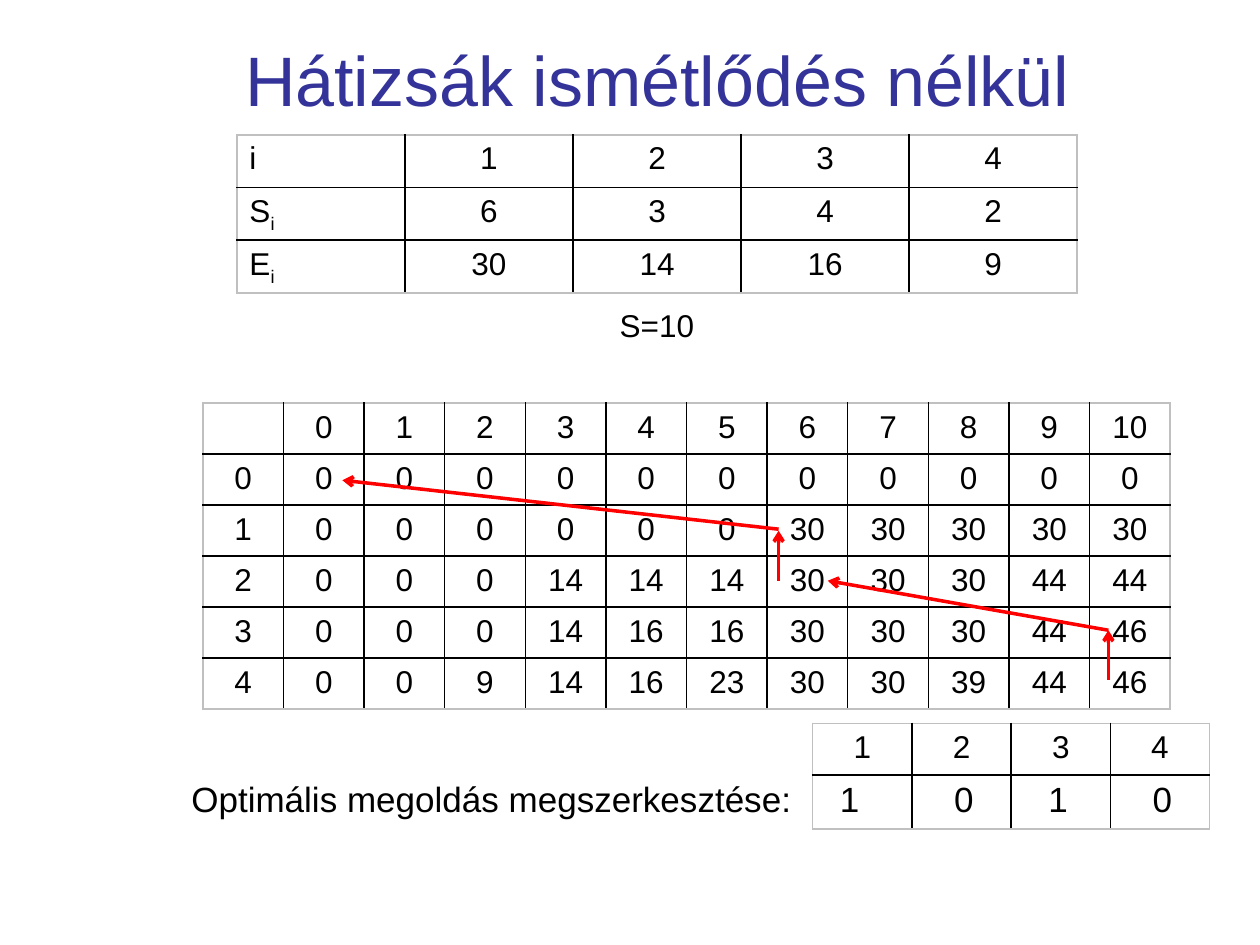
from lxml.etree import SubElement
from pptx import Presentation
from pptx.dml.color import RGBColor
from pptx.enum.shapes import MSO_CONNECTOR as Connector
from pptx.enum.text import MSO_ANCHOR as Anchor, MSO_AUTO_SIZE as AutoSize, PP_ALIGN as Align
from pptx.oxml.ns import qn
from pptx.util import Inches, Pt

COLORS = {"title": "333399", "text": "000000", "grid": "000000",
          "frame": "C0C0C0", "arrow": "FF0000"}
FONT = "Arial"
WIDTH, HEIGHT = 10, 7.5

# Boxes: left, top, width, height in inches
TITLE_BOX = (0.67, 0, 9.09, 1.25)
ITEMS_BOX = (1.88, 1.07, 6.67, 1.25)
CAPACITY_BOX = (4.82, 2.38, 0.8, 0.4)
VALUES_BOX = (1.61, 3.2, 7.68, 2.43)
CAPTION_BOX = (1.42, 6.12, 6.42, 0.44)
SOLUTION_BOX = (6.45, 5.74, 3.15, 0.84)

ITEMS = [["i", 1, 2, 3, 4], ["S_i", 6, 3, 4, 2], ["E_i", 30, 14, 16, 9]]
VALUES = [
    ["", *range(11)],
    [0] + [0] * 11,
    [1] + [0] * 6 + [30] * 5,
    [2, 0, 0, 0, 14, 14, 14, 30, 30, 30, 44, 44],
    [3, 0, 0, 0, 14, 16, 16, 30, 30, 30, 44, 46],
    [4, 0, 0, 9, 14, 16, 23, 30, 30, 39, 44, 46],
]
# Trace of the optimum: (column, row) to (column, row) in the values grid
TRACE = [((7.14, 3.48), (7.14, 2.5)), ((11.23, 4.45), (7.75, 3.48)),
         ((11.23, 5.42), (11.23, 4.45)), ((7.14, 2.47), (1.73, 1.51))]
# Chosen items: left edge in columns of the solution grid, digit
CHOICES = [(0.15, "1"), (1.3, "0"), (2.25, "1"), (3.3, "0")]


def to_emu(box):
    return [Inches(length) for length in box]


def write(paragraph, text, size=18, color="text", align=None):
    """Write text; the part after an underscore becomes a subscript."""
    paragraph.alignment = align
    for index, part in enumerate(text.split("_")):
        run = paragraph.add_run()
        run.text = part
        run.font.size = Pt(size)
        run.font.name = FONT
        run.font.color.rgb = RGBColor.from_string(COLORS[color])
        if index:
            run.font._element.set("baseline", "-25000")


def set_border(cell, side, color):
    line = SubElement(cell._tc.get_or_add_tcPr(), qn(f"a:ln{side}"), w=str(Pt(1)))
    fill = SubElement(line, qn("a:solidFill"))
    SubElement(fill, qn("a:srgbClr"), val=COLORS[color])


def add_title(slide, box, text):
    title = slide.shapes.title
    title.left, title.top, title.width, title.height = to_emu(box)
    frame = title.text_frame
    frame.vertical_anchor = Anchor.MIDDLE
    write(frame.paragraphs[0], text, size=40, color="title", align=Align.CENTER)


def add_text(slide, box, text, size=18, wrap=False):
    frame = slide.shapes.add_textbox(*to_emu(box)).text_frame
    frame.word_wrap = wrap
    frame.auto_size = AutoSize.SHAPE_TO_FIT_TEXT
    write(frame.paragraphs[0], text, size=size)


def add_grid(slide, box, rows, heights=None):
    row_count, column_count = len(rows), len(rows[0])
    table = slide.shapes.add_table(row_count, column_count, *to_emu(box)).table
    table.first_row = table.horz_banding = False
    for column in table.columns:
        column.width = Inches(box[2] / column_count)
    for index, row in enumerate(table.rows):
        row.height = Inches(heights[index] if heights else box[3] / row_count)
    for r, values in enumerate(rows):
        for c, value in enumerate(values):
            cell = table.cell(r, c)
            if value != "":
                label = isinstance(value, str)
                write(cell.text_frame.paragraphs[0], str(value),
                      align=Align.LEFT if label else Align.CENTER)
            # Black inner rules, grey outer frame
            outer = {"L": c == 0, "R": c == column_count - 1,
                     "T": r == 0, "B": r == row_count - 1}
            for side, is_outer in outer.items():
                set_border(cell, side, "frame" if is_outer else "grid")
            cell.fill.background()


def add_arrow(slide, start, end):
    arrow = slide.shapes.add_connector(Connector.STRAIGHT, *to_emu(start + end))
    arrow.line.color.rgb = RGBColor.from_string(COLORS["arrow"])
    arrow.line.width = Pt(2)
    SubElement(arrow.line._get_or_add_ln(), qn("a:tailEnd"), type="arrow")
    SubElement(arrow._element.spPr, qn("a:effectLst"))


def add_values(slide, box):
    """Dynamic programming table with the trace of the optimum."""
    add_grid(slide, box, VALUES)
    left, top, width, height = box
    column, row = width / len(VALUES[0]), height / len(VALUES)
    for ends in TRACE:
        add_arrow(slide, *[(left + x * column, top + y * row) for x, y in ends])


def add_solution(slide, box):
    """Item numbers with the chosen digits laid over the second row."""
    add_grid(slide, box, [[1, 2, 3, 4], [""] * 4], heights=(0.41, 0.43))
    left, top, width, height = box
    for offset, digit in CHOICES:
        add_text(slide, (left + offset * width / 4, top + 0.38, 0.36, 0.44), digit, size=20)


def main():
    presentation = Presentation()
    presentation.slide_width, presentation.slide_height = Inches(WIDTH), Inches(HEIGHT)
    slide = presentation.slides.add_slide(presentation.slide_layouts[5])
    add_title(slide, TITLE_BOX, "Hátizsák ismétlődés nélkül")
    add_grid(slide, ITEMS_BOX, ITEMS)
    add_text(slide, CAPACITY_BOX, "S=10")
    add_values(slide, VALUES_BOX)
    add_text(slide, CAPTION_BOX, "Optimális megoldás megszerkesztése:", size=20, wrap=True)
    add_solution(slide, SOLUTION_BOX)
    presentation.save("out.pptx")


if __name__ == "__main__":
    main()
